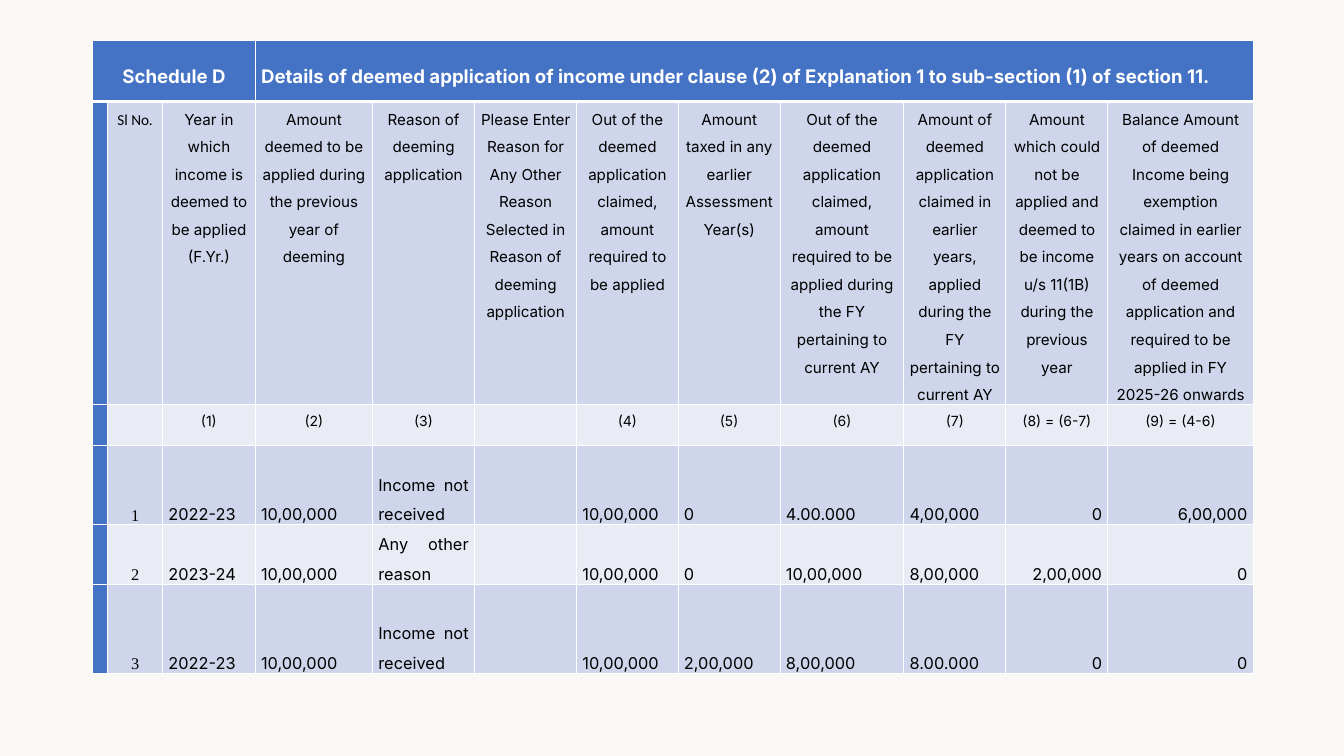
from lxml.etree import SubElement
from pptx import Presentation
from pptx.dml.color import RGBColor
from pptx.enum.text import MSO_ANCHOR, PP_ALIGN
from pptx.oxml.ns import qn
from pptx.util import Pt

COLORS = {
    "page": "F9F8F5",
    "header": "4472C4",
    "band_dark": "CFD5EA",
    "band_light": "E9EBF5",
    "line": "FFFFFF",
    "header_text": "FFFFFF",
    "text": "000000",
}


def write_cell(cell, text, size=14, font="Inter", color="text", bold=False,
               align=PP_ALIGN.CENTER, anchor=MSO_ANCHOR.TOP):
    cell.vertical_anchor = anchor
    paragraph = cell.text_frame.paragraphs[0]
    paragraph.alignment = align
    paragraph.line_spacing = 1.5
    run = paragraph.add_run()
    run.text = text
    run.font.size = Pt(size)
    run.font.name = font
    run.font.bold = bold
    run.font.color.rgb = RGBColor.from_string(COLORS[color])


def style_cell(cell, fill, bottom_width=1):
    cell.margin_left = cell.margin_right = Pt(5)
    cell.margin_top = cell.margin_bottom = 0
    properties = cell._tc.get_or_add_tcPr()
    for side, width in (("L", 1), ("R", 1), ("T", 1), ("B", bottom_width)):
        border = SubElement(properties, qn(f"a:ln{side}"), w=str(Pt(width)))
        border_fill = SubElement(border, qn("a:solidFill"))
        SubElement(border_fill, qn("a:srgbClr"), val=COLORS["line"])
    cell.fill.solid()
    cell.fill.fore_color.rgb = RGBColor.from_string(COLORS[fill])


# Slide and background
prs = Presentation()
prs.slide_width, prs.slide_height = Pt(1152), Pt(648)
slide = prs.slides.add_slide(prs.slide_layouts[6])
slide.background.fill.solid()
slide.background.fill.fore_color.rgb = RGBColor.from_string(COLORS["page"])

# Schedule content; the first column is a plain blue strip
headings = [
    "Sl No.",
    "Year in which income is deemed to be applied (F.Yr.)",
    "Amount deemed to be applied during the previous year of deeming",
    "Reason of deeming application",
    "Please Enter Reason for Any Other Reason Selected in Reason of deeming application",
    "Out of the deemed application claimed, amount required to be applied",
    "Amount taxed in any earlier Assessment Year(s)",
    "Out of the deemed application claimed, amount required to be applied "
    "during the FY pertaining to current AY",
    "Amount of deemed application claimed in earlier years, applied "
    "during the FY pertaining to current AY",
    "Amount which could not be applied and deemed to be income u/s 11(1B) "
    "during the previous year",
    "Balance Amount of deemed Income being exemption claimed in earlier years "
    "on account of deemed application and required to be applied in FY 2025-26 onwards",
]
references = ["", "(1)", "(2)", "(3)", "", "(4)", "(5)", "(6)", "(7)",
              "(8) = (6-7)", "(9) = (4-6)"]
entries = [
    ["1", "2022-23", "10,00,000", "Income not received", "", "10,00,000", "0",
     "4.00.000", "4,00,000", "0", "6,00,000"],
    ["2", "2023-24", "10,00,000", "Any other reason", "", "10,00,000", "0",
     "10,00,000", "8,00,000", "2,00,000", "0"],
    ["3", "2022-23", "10,00,000", "Income not received", "", "10,00,000", "2,00,000",
     "8,00,000", "8.00.000", "0", "0"],
]

# Table grid
column_widths = [11.5, 47, 79.5, 100.5, 87.5, 87.5, 87, 87.5, 106, 87.5, 87.5, 124.5]
row_heights = [52, 260, 35, 68, 51, 76]
schedule = slide.shapes.add_table(
    len(row_heights), len(column_widths), Pt(79.5), Pt(35),
    Pt(sum(column_widths)), Pt(sum(row_heights))).table
for column, width in zip(schedule.columns, column_widths):
    column.width = Pt(width)
for row, height in zip(schedule.rows, row_heights):
    row.height = Pt(height)

# Fills and borders
for r in range(len(row_heights)):
    for c in range(len(column_widths)):
        band = "band_dark" if r % 2 else "band_light"
        style_cell(schedule.cell(r, c), "header" if r == 0 or c == 0 else band,
                   bottom_width=3 if r == 0 else 1)

# Title row
schedule.cell(0, 0).merge(schedule.cell(0, 2))
schedule.cell(0, 3).merge(schedule.cell(0, 11))
title_format = dict(size=16, color="header_text", bold=True, anchor=MSO_ANCHOR.MIDDLE)
write_cell(schedule.cell(0, 0), "Schedule D", **title_format)
write_cell(schedule.cell(0, 3),
           "Details of deemed application of income under clause (2) of "
           "Explanation 1 to sub-section (1) of section 11.",
           align=PP_ALIGN.JUSTIFY, **title_format)

# Column headings and their reference numbers
for c, (heading, reference) in enumerate(zip(headings, references), start=1):
    write_cell(schedule.cell(1, c), heading, size=13,
               font="Calibri" if c == 1 else "Inter")
    if reference:
        write_cell(schedule.cell(2, c), reference, size=12)

# Entries: centred serial number, right-aligned last two columns
for r, entry in enumerate(entries, start=3):
    for c, value in enumerate(entry, start=1):
        if not value:
            continue
        if c == 1:
            align = PP_ALIGN.CENTER
        else:
            align = PP_ALIGN.RIGHT if c >= 10 else PP_ALIGN.JUSTIFY
        write_cell(schedule.cell(r, c), value, align=align, anchor=MSO_ANCHOR.BOTTOM,
                   font="Times New Roman" if c == 1 else "Inter")

prs.save("out.pptx")
